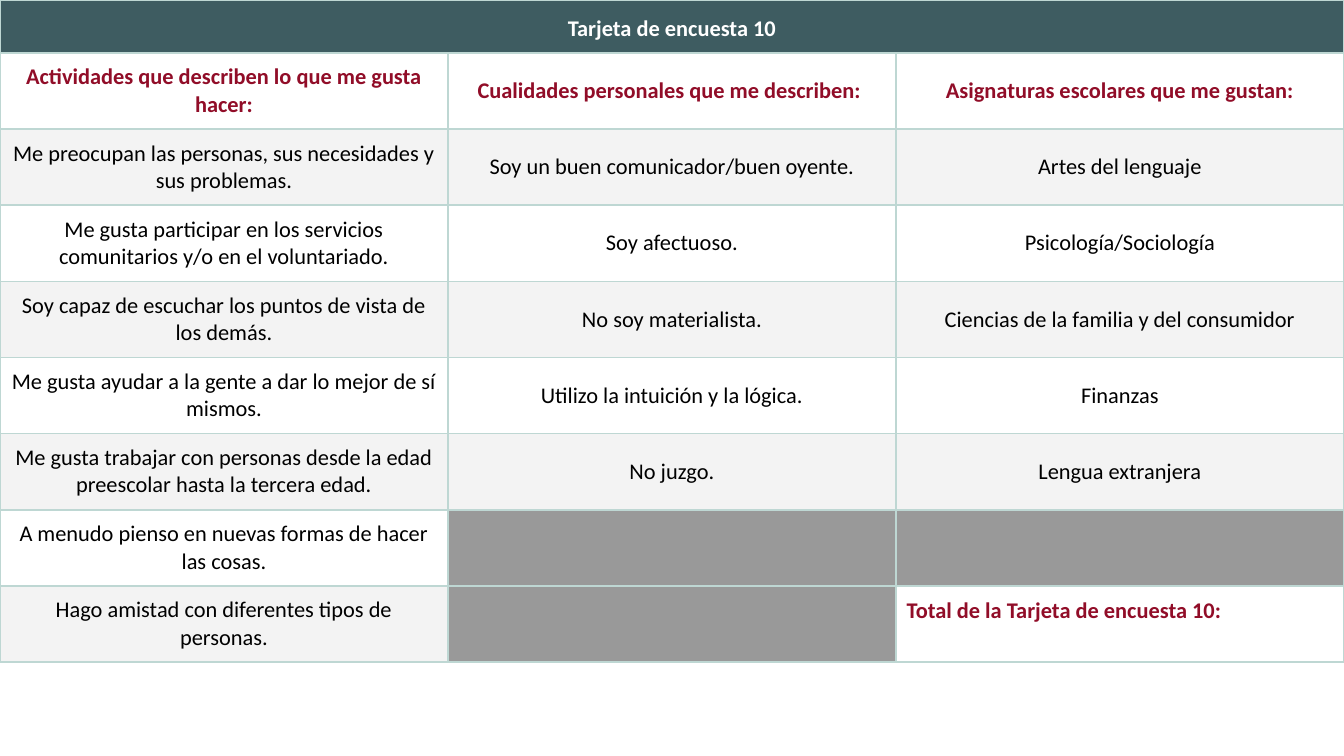
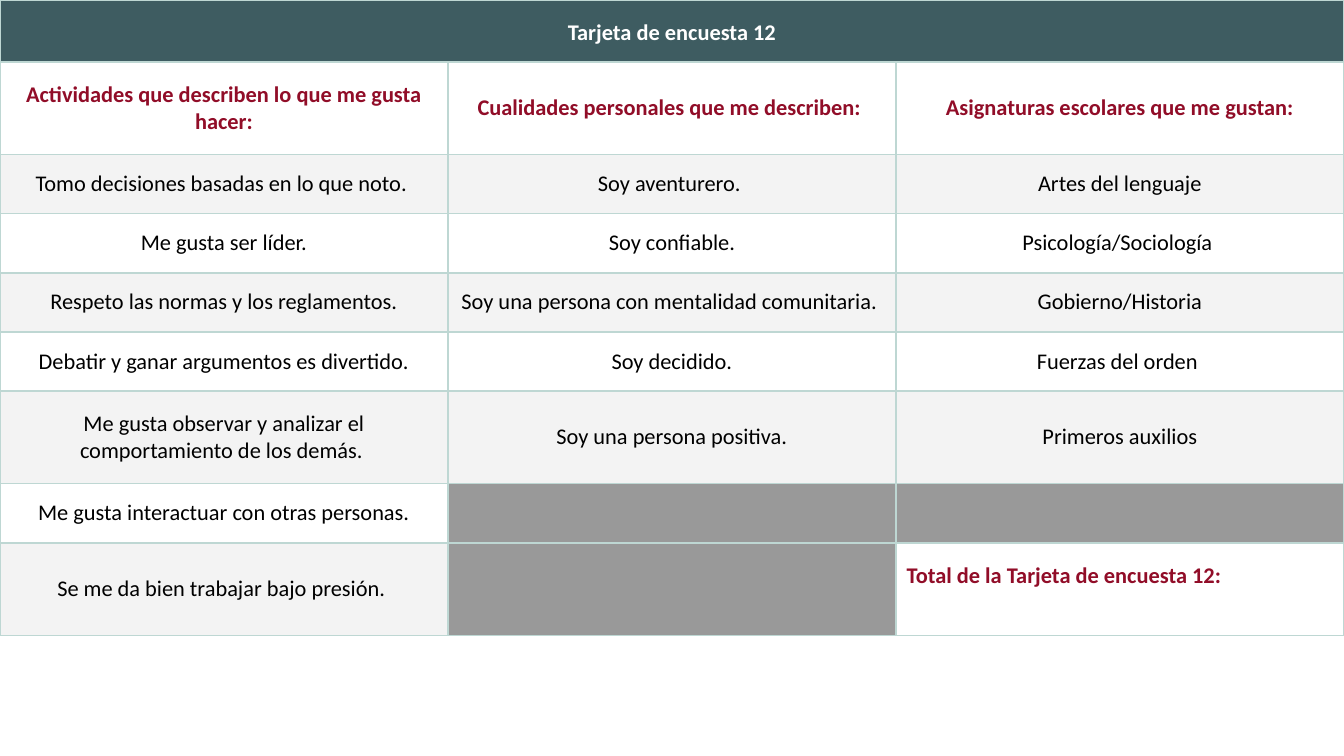
from dataclasses import dataclass

import pptx
import pptx.dml.color
import pptx.enum.text
import pptx.oxml
import pptx.oxml.ns
import pptx.util

Inches = pptx.util.Inches
CENTER = pptx.enum.text.PP_ALIGN.CENTER
LEFT = pptx.enum.text.PP_ALIGN.LEFT

# Shared style
FONT, SIZE = "Calibri", 12
TEAL, CRIMSON, MINT = "3E5C61", "910D28", "BED7D3"
WHITE, BAND, GREY, BLACK = "FFFFFF", "F3F3F3", "999999", "000000"
SLIDE_W = Inches(10)
SLIDE_H = SLIDE_W * 9 // 16
MARGIN = 0.08
LINE = 0.2  # room kept below the total for one line of writing

HEADINGS = (
    "Actividades que describen lo que me gusta hacer:",
    "Cualidades personales que me describen: ",
    "Asignaturas escolares que me gustan:",
)


@dataclass
class SurveyCard:
    number: int
    height: float
    row_heights: list[float]
    activities: list[str]
    qualities: list[str]
    subjects: list[str]


CARDS = [
    SurveyCard(
        10, 4.85, [0.36, 0.46, 0.42, 0.42, 0.42, 0.35, 0.42, 0.35, 0.42],
        ["Me preocupan las personas, sus necesidades y sus problemas.",
         "Me gusta participar en los servicios comunitarios y/o en el voluntariado.",
         "Soy capaz de escuchar los puntos de vista de los demás.",
         "Me gusta ayudar a la gente a dar lo mejor de sí mismos.",
         "Me gusta trabajar con personas desde la edad preescolar hasta la tercera edad.",
         "A menudo pienso en nuevas formas de hacer las cosas.",
         "Hago amistad con diferentes tipos de personas."],
        ["Soy un buen comunicador/buen oyente.", "Soy afectuoso.",
         "No soy materialista.", "Utilizo la intuición y la lógica.", "No juzgo."],
        ["Artes del lenguaje", "Psicología/Sociología",
         "Ciencias de la familia y del consumidor", "Finanzas", "Lengua extranjera"],
    ),
    SurveyCard(
        12, 4.73, [0.46, 0.69, 0.44, 0.44, 0.44, 0.44, 0.69, 0.44, 0.69],
        ["Tomo decisiones basadas en lo que noto. ",
         "Me gusta ser líder.",
         "Respeto las normas y los reglamentos.",
         "Debatir y ganar argumentos es divertido.",
         "Me gusta observar y analizar el comportamiento de los demás. ",
         "Me gusta interactuar con otras personas.",
         "Se me da bien trabajar bajo presión. "],
        ["Soy aventurero. ", "Soy confiable.",
         "Soy una persona con mentalidad comunitaria. ", "Soy decidido.",
         "Soy una persona positiva."],
        ["Artes del lenguaje", "Psicología/Sociología ", "Gobierno/Historia",
         "Fuerzas del orden ", "Primeros auxilios"],
    ),
]


def rgb(color: str) -> pptx.dml.color.RGBColor:
    return pptx.dml.color.RGBColor.from_string(color)


def paint_cell(cell, color: str) -> None:
    """Outline the cell on all four sides, then fill it."""
    tc_pr = cell._tc.get_or_add_tcPr()
    for side in "LRTB":
        tc_pr.append(pptx.oxml.parse_xml(
            f'<a:ln{side} {pptx.oxml.ns.nsdecls("a")} w="{pptx.util.Pt(1)}">'
            f'<a:solidFill><a:srgbClr val="{MINT}"/></a:solidFill></a:ln{side}>'))
    cell.fill.solid()
    cell.fill.fore_color.rgb = rgb(color)


def write_cell(cell, text: str, *, color: str = BLACK, bold: bool = False,
               align=CENTER, before: float = 0, after: float = 0,
               spacing: float = 1.0, room_below: float = 0) -> None:
    cell.vertical_anchor = pptx.enum.text.MSO_ANCHOR.MIDDLE
    cell.margin_left = cell.margin_right = cell.margin_top = Inches(MARGIN)
    cell.margin_bottom = Inches(MARGIN + room_below)
    p = cell.text_frame.paragraphs[0]
    p.alignment = align
    p.line_spacing = spacing
    p.space_before = pptx.util.Pt(before)
    p.space_after = pptx.util.Pt(after)
    r = p.add_run()
    r.text = text
    r.font.name, r.font.size, r.font.bold = FONT, pptx.util.Pt(SIZE), bold
    r.font.color.rgb = rgb(color)


def add_card(prs, card: SurveyCard) -> None:
    s = prs.slides.add_slide(prs.slide_layouts[6])
    columns = (card.activities, card.qualities, card.subjects)
    n_rows, n_cols = len(card.row_heights), len(columns)
    frame = s.shapes.add_table(n_rows, n_cols, 0, 0, SLIDE_W, Inches(card.height))
    table = frame.table
    table.first_row = table.horz_banding = False
    for row, height in zip(table.rows, card.row_heights):
        row.height = Inches(height)
    frame.height = Inches(card.height)

    # Title band and column headings
    for col, heading in enumerate(HEADINGS):
        paint_cell(table.cell(0, col), TEAL)
        paint_cell(table.cell(1, col), WHITE)
        write_cell(table.cell(1, col), heading, color=CRIMSON, bold=True, before=10)
    title = table.cell(0, 0)
    title.merge(table.cell(0, n_cols - 1))
    name = f"Tarjeta de encuesta {card.number}"
    write_cell(title, name, color=WHITE, bold=True, after=6, spacing=1.15)

    # Statements in alternating bands; unused cells are grey
    for col, statements in enumerate(columns):
        for i in range(n_rows - 2):
            cell = table.cell(i + 2, col)
            if i < len(statements):
                paint_cell(cell, WHITE if i % 2 else BAND)
                write_cell(cell, statements[i])
            elif (i + 2, col) == (n_rows - 1, n_cols - 1):
                paint_cell(cell, WHITE)
                write_cell(cell, f"Total de la {name}:", color=CRIMSON, bold=True,
                           align=LEFT, before=10, room_below=LINE)
            else:
                paint_cell(cell, GREY)


def main() -> None:
    prs = pptx.Presentation()
    prs.slide_width, prs.slide_height = SLIDE_W, SLIDE_H
    for card in CARDS:
        add_card(prs, card)
    prs.save("out.pptx")


if __name__ == "__main__":
    main()
